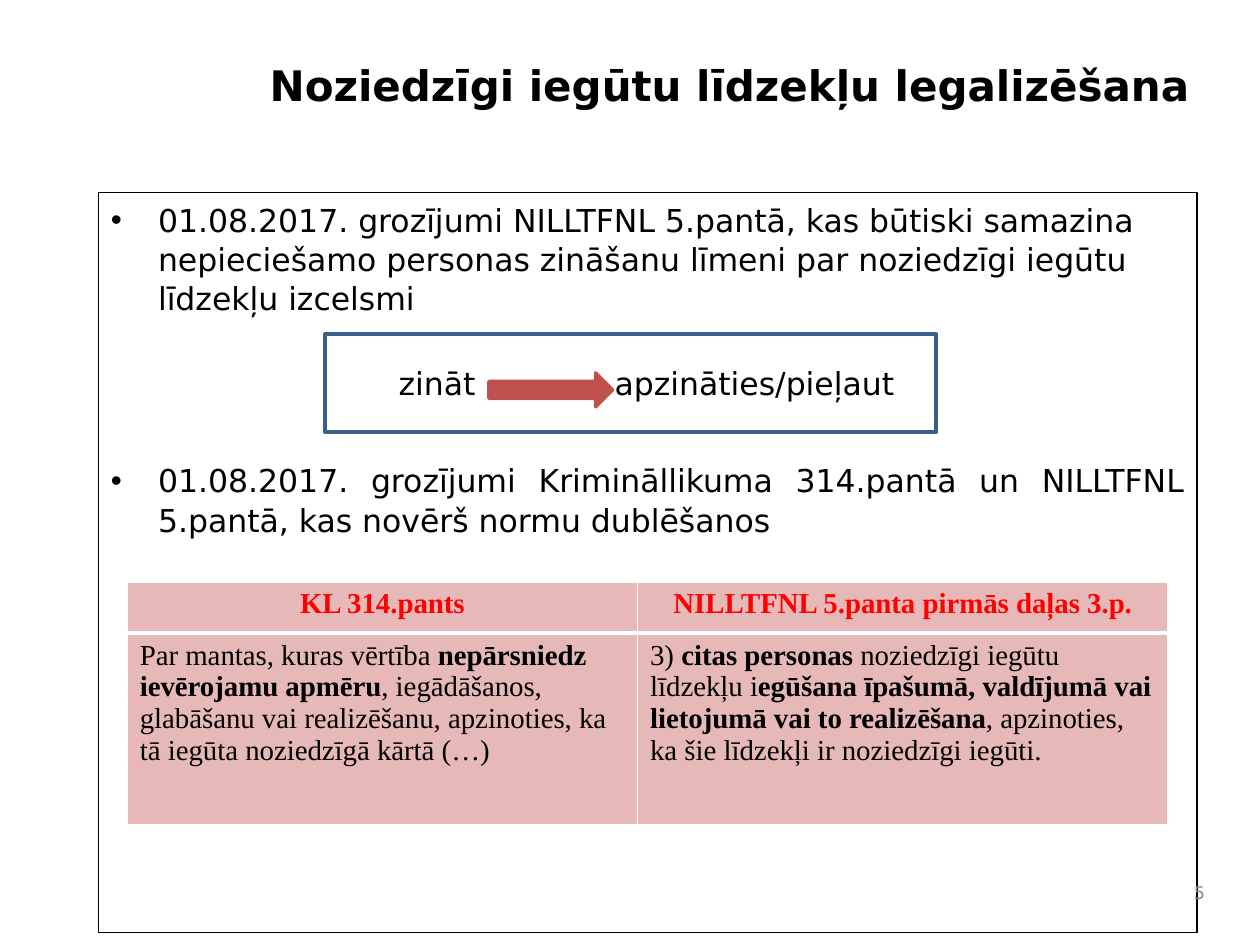
from dataclasses import dataclass

import pptx
import pptx.dml.color
import pptx.enum.shapes
import pptx.enum.text
import pptx.oxml
import pptx.oxml.ns
import pptx.util
from lxml import etree

Pt = pptx.util.Pt
RGB = pptx.dml.color.RGBColor.from_string
SHAPE = pptx.enum.shapes.MSO_SHAPE
ALIGN = pptx.enum.text.PP_ALIGN
ANCHOR = pptx.enum.text.MSO_ANCHOR
qn = pptx.oxml.ns.qn


@dataclass(frozen=True)
class Theme:
    sans: str = "DejaVu Sans"
    serif: str = "Times New Roman"
    ink: str = "000000"
    muted: str = "898989"
    frame: str = "3A5F8C"
    accent: str = "C0504D"
    cell: str = "E6B9B8"
    border: str = "FFFFFF"
    heading: str = "FF0000"
    title_size: float = 24
    body_size: float = 18
    table_size: float = 16.5
    number_size: float = 10


THEME = Theme()


def add_text(p, text, size=THEME.body_size, font=THEME.sans, color=THEME.ink,
             bold=False, align=ALIGN.LEFT):
    p.alignment = align
    r = p.add_run()
    r.text = text
    r.font.size = Pt(size)
    r.font.name = font
    r.font.bold = bold
    r.font.color.rgb = RGB(color)
    return r


def set_frame(tf, anchor):
    tf.word_wrap = True
    tf.auto_size = pptx.enum.text.MSO_AUTO_SIZE.NONE
    tf.vertical_anchor = anchor
    tf.margin_left = tf.margin_right = Pt(7.2)
    tf.margin_top = tf.margin_bottom = Pt(3.6)


def add_shape(s, kind, box, line, width, fill=None, anchor=ANCHOR.TOP):
    sp = s.shapes.add_shape(kind, *map(Pt, box))
    sp.shadow.inherit = False
    sp.line.color.rgb = RGB(line)
    sp.line.width = Pt(width)
    if fill:
        sp.fill.solid()
        sp.fill.fore_color.rgb = RGB(fill)
    else:
        sp.fill.background()
    set_frame(sp.text_frame, anchor)
    return sp


def add_title(s, text):
    sp = s.shapes.title
    sp.left, sp.top, sp.width, sp.height = map(Pt, (146.9, 30.2, 549.4, 55.4))
    set_frame(sp.text_frame, ANCHOR.TOP)
    add_text(sp.text_frame.paragraphs[0], text, size=THEME.title_size, bold=True)


def add_bullet(p, text, align, space_before=0):
    pPr = p._p.get_or_add_pPr()
    pPr.set("marL", str(Pt(27)))
    pPr.set("indent", str(Pt(-27)))
    etree.SubElement(pPr, qn("a:buFont"), typeface="Arial")
    etree.SubElement(pPr, qn("a:buChar"), char="•")
    p.space_before = Pt(space_before)
    p.line_spacing = 1.04
    add_text(p, text, align=align)


def add_body(s):
    sp = add_shape(s, SHAPE.RECTANGLE, (56.2, 110.2, 627.8, 422.6), THEME.ink, 0.75)
    tf = sp.text_frame
    add_bullet(tf.paragraphs[0],
               "01.08.2017. grozījumi NILLTFNL 5.pantā, kas būtiski samazina "
               "nepieciešamo personas zināšanu līmeni par noziedzīgi iegūtu "
               "līdzekļu izcelsmi", ALIGN.LEFT)
    add_bullet(tf.add_paragraph(),
               "01.08.2017. grozījumi Krimināllikuma 314.pantā un NILLTFNL "
               "5.pantā, kas novērš normu dublēšanos", ALIGN.JUSTIFY, 81.7)


def add_transition(s, before, after):
    sp = add_shape(s, SHAPE.RECTANGLE, (185.8, 190.8, 349.2, 56.2), THEME.frame, 2,
                   anchor=ANCHOR.MIDDLE)
    tf = sp.text_frame
    tf.margin_left = Pt(42)
    p = tf.paragraphs[0]
    tabs = etree.SubElement(p._p.get_or_add_pPr(), qn("a:tabLst"))
    etree.SubElement(tabs, qn("a:tab"), pos=str(Pt(123.4)), algn="l")
    add_text(p, f"{before}\t{after}")
    add_shape(s, SHAPE.RIGHT_ARROW, (279.4, 213.1, 70.6, 19.4), THEME.accent, 2,
              fill=THEME.accent)


def format_cell(cell, top, bottom):
    tcPr = cell._tc.get_or_add_tcPr()
    for side, width in (("L", 1), ("R", 1), ("T", top), ("B", bottom)):
        ln = etree.SubElement(tcPr, qn(f"a:ln{side}"), w=str(Pt(width)))
        fill = etree.SubElement(ln, qn("a:solidFill"))
        etree.SubElement(fill, qn("a:srgbClr"), val=THEME.border)
    cell.fill.solid()
    cell.fill.fore_color.rgb = RGB(THEME.cell)


def add_comparison(s, headings, texts):
    widths, heights = (291.6, 303.1), (29.2, 109.4)
    table = s.shapes.add_table(2, 2, Pt(72.7), Pt(332.6),
                               Pt(sum(widths)), Pt(sum(heights))).table
    for column, width in zip(table.columns, widths):
        column.width = Pt(width)
    for row, height in zip(table.rows, heights):
        row.height = Pt(height)
    style = dict(size=THEME.table_size, font=THEME.serif)
    for i, (heading, parts) in enumerate(zip(headings, texts)):
        head, body = table.cell(0, i), table.cell(1, i)
        format_cell(head, top=1, bottom=3)
        format_cell(body, top=3, bottom=1)
        add_text(head.text_frame.paragraphs[0], heading, color=THEME.heading,
                 bold=True, align=ALIGN.CENTER, **style)
        for text, bold in parts:
            add_text(body.text_frame.paragraphs[0], text, bold=bold, **style)


def add_slide_number(s, number):
    sp = s.shapes.add_textbox(*map(Pt, (671.8, 498.2, 23.8, 23.8)))
    set_frame(sp.text_frame, ANCHOR.MIDDLE)
    add_text(sp.text_frame.paragraphs[0], number, size=THEME.number_size,
             color=THEME.muted, align=ALIGN.RIGHT)


def main():
    prs = pptx.Presentation()
    prs.slide_width, prs.slide_height = Pt(720), Pt(540)
    s = prs.slides.add_slide(prs.slide_layouts[5])
    add_title(s, "Noziedzīgi iegūtu līdzekļu legalizēšana")
    add_body(s)
    add_slide_number(s, "5")
    add_transition(s, "zināt", "apzināties/pieļaut")
    add_comparison(
        s,
        ("KL 314.pants", "NILLTFNL 5.panta pirmās daļas 3.p."),
        ((("Par mantas, kuras vērtība ", False),
          ("nepārsniedz ievērojamu apmēru", True),
          (", iegādāšanos, glabāšanu vai realizēšanu, apzinoties, ka tā iegūta "
           "noziedzīgā kārtā (…)", False)),
         (("3) ", False),
          ("citas personas ", True),
          ("noziedzīgi iegūtu līdzekļu i", False),
          ("egūšana īpašumā, valdījumā vai lietojumā vai to realizēšana", True),
          (", apzinoties, ka šie līdzekļi ir noziedzīgi iegūti.", False))))
    prs.save("out.pptx")


if __name__ == "__main__":
    main()
